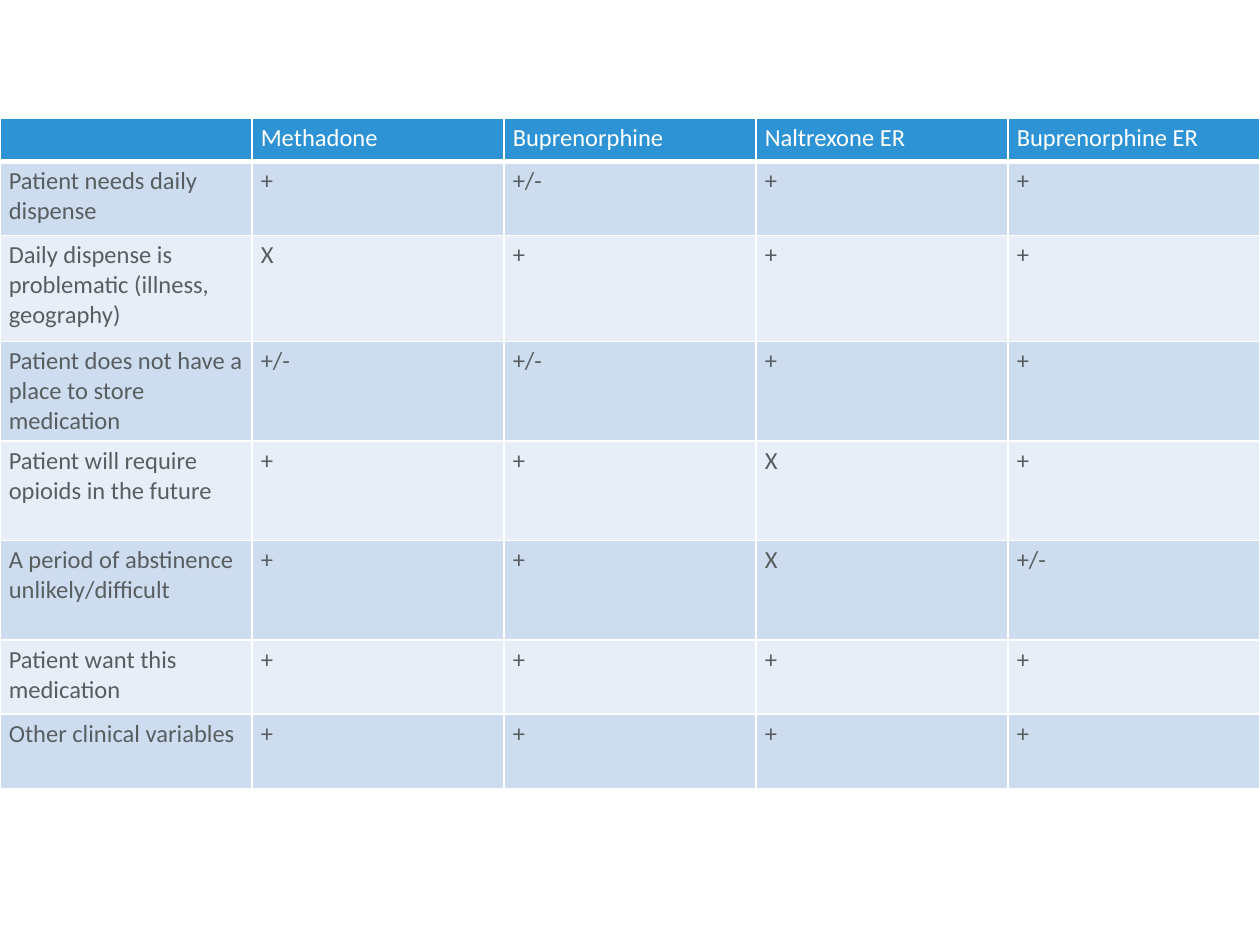
from lxml import etree
from pptx import Presentation
from pptx.dml.color import RGBColor
from pptx.oxml.ns import qn
from pptx.util import Inches, Pt

COLORS = {"head": "2E93D5", "dark": "CDDCEF", "light": "E8EEF7",
          "text": "585E60", "white": "FFFFFF"}
FONT = {"name": "Calibri", "size": Pt(14), "bold": False}
INSETS = {"margin_left": Inches(0.07), "margin_right": Inches(0.07),
          "margin_top": Inches(0.04), "margin_bottom": Inches(0.04)}

HEIGHTS = [0.34, 0.59, 0.84, 0.79, 0.79, 0.79, 0.59, 0.59]
ROWS = [
    ["", "Methadone", "Buprenorphine", "Naltrexone ER", "Buprenorphine ER"],
    ["Patient needs daily dispense", "+", "+/-", "+", "+"],
    ["Daily dispense is problematic (illness, geography)", "X", "+", "+", "+"],
    ["Patient does not have a place to store medication", "+/-", "+/-", "+", "+"],
    ["Patient will require opioids in the future", "+", "+", "X", "+"],
    ["A period of abstinence unlikely/difficult", "+", "+", "X", "+/-"],
    ["Patient want this medication", "+", "+", "+", "+"],
    ["Other clinical variables", "+", "+", "+", "+"],
]


def assign(target, values):
    for name, value in values.items():
        setattr(target, name, value)


class Deck:
    def __init__(self, width, height):
        self.prs = Presentation()
        self.prs.slide_width = Inches(width)
        self.prs.slide_height = Inches(height)
        self.slide = self.prs.slides.add_slide(self.prs.slide_layouts[6])

    def border(self, cell, base):
        """Draw white edges, with the bottom one base points wide."""
        props = cell._tc.get_or_add_tcPr()
        for side, width in {"L": 1, "R": 1, "T": 1, "B": base}.items():
            line = etree.SubElement(props, qn(f"a:ln{side}"), w=str(Pt(width)))
            fill = etree.SubElement(line, qn("a:solidFill"))
            etree.SubElement(fill, qn("a:srgbClr"), val=COLORS["white"])

    def cell(self, cell, text, fill, color, base):
        assign(cell, INSETS)
        self.border(cell, base)
        cell.fill.solid()
        cell.fill.fore_color.rgb = RGBColor.from_string(COLORS[fill])
        para = cell.text_frame.paragraphs[0]
        if text:
            run = para.add_run()
            run.text = text
            assign(run.font, FONT)
            run.font.color.rgb = RGBColor.from_string(COLORS[color])
        else:
            # An empty cell keeps the small type, so its row stays low.
            size = str(int(FONT["size"].pt * 100))
            etree.SubElement(para._p, qn("a:endParaRPr"), sz=size)

    def table(self, left, top, width, rows, heights):
        count = len(rows[0])
        table = self.slide.shapes.add_table(
            len(rows), count, Inches(left), Inches(top),
            Inches(width), Inches(sum(heights))).table
        for col in table.columns:
            col.width = Inches(width / count)
        for i, (row, height) in enumerate(zip(rows, heights)):
            table.rows[i].height = Inches(height)
            if i == 0:
                look = ("head", "white", 3)
            else:
                look = ("dark" if i % 2 else "light", "text", 1)
            for j, text in enumerate(row):
                self.cell(table.cell(i, j), text, *look)


def main():
    deck = Deck(10, 7.5)
    deck.table(0, 0.94, 10, ROWS, HEIGHTS)
    deck.prs.save("out.pptx")


if __name__ == "__main__":
    main()
